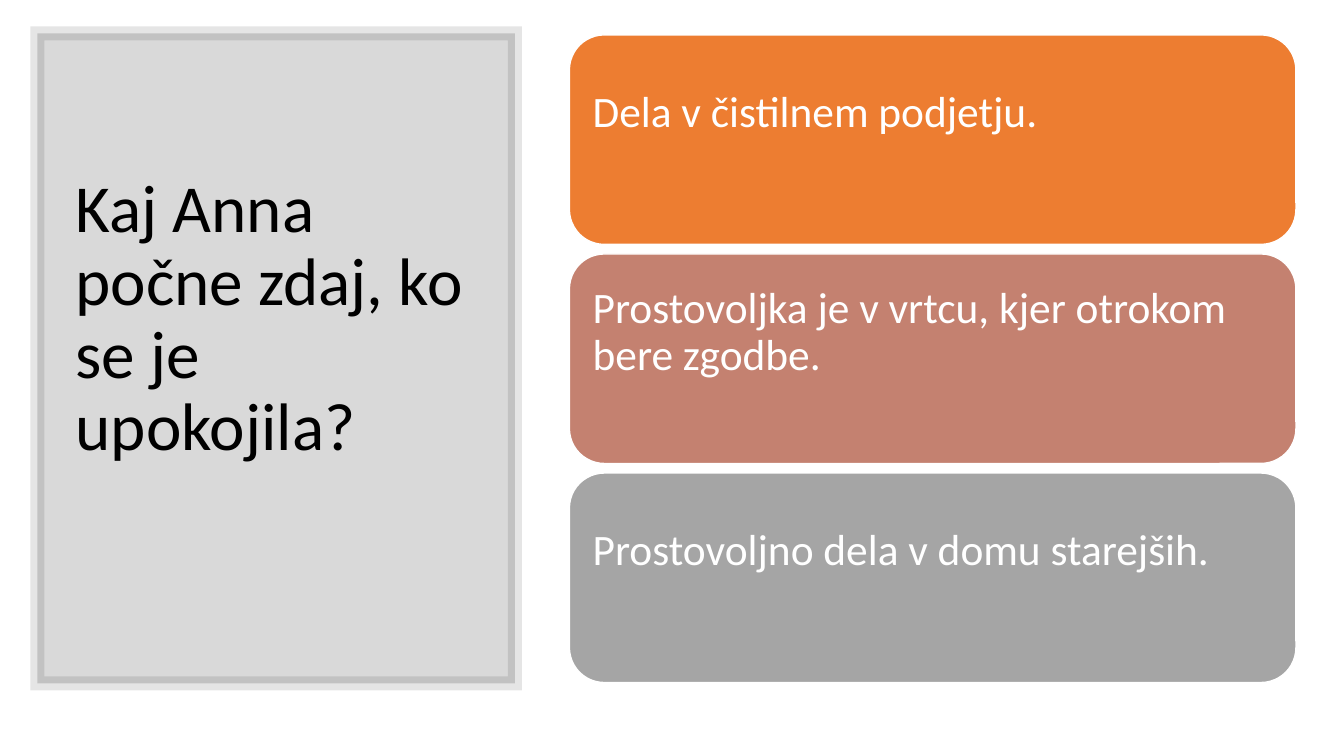
from pptx import Presentation
from pptx.dml.color import RGBColor
from pptx.enum.shapes import MSO_SHAPE
from pptx.enum.text import MSO_ANCHOR, PP_ALIGN
from pptx.oxml.ns import qn
from pptx.util import Cm, Pt
from lxml import etree

RECT, ROUND = MSO_SHAPE.RECTANGLE, MSO_SHAPE.ROUNDED_RECTANGLE
MIDDLE, LEFT = MSO_ANCHOR.MIDDLE, PP_ALIGN.LEFT

# Content
QUESTION = "Kaj Anna počne zdaj, ko se je upokojila?"
ANSWERS = [
    ("Dela v čistilnem podjetju.", "ED7D31"),
    ("Prostovoljka je v vrtcu, kjer otrokom bere zgodbe.", "C48170"),
    ("Prostovoljno dela v domu starejših.", "A5A5A5"),
]


class Theme:
    font = "Calibri"
    dark, light = "000000", "FFFFFF"
    title_size, answer_size = 48, 31
    panel_alpha, frame_alpha = 15, 10


# Layout in cm
PANEL = (0.94, 0.84, 12.04, 16.38)
TITLE = (1.65, 1.78, 10.57, 14.6)
CARD_LEFT, CARD_TOP, CARD_W, CARD_H = 14.35, 0.88, 18.31, 5.28
CARD_STEP = 5.52
CARD_INSET = 0.33


def paint(fill, color, alpha=None):
    fill.solid()
    fill.fore_color.rgb = RGBColor.from_string(color)
    if alpha is not None:
        clr = fill._xPr.find(".//" + qn("a:srgbClr"))
        etree.SubElement(clr, qn("a:alpha"), val=str(alpha * 1000))


def add_box(s, kind, box, color, line_color, line_pt, alpha=None, line_alpha=None):
    sp = s.shapes.add_shape(kind, *map(Cm, box))
    sp.shadow.inherit = False
    paint(sp.fill, color, alpha)
    paint(sp.line.fill, line_color, line_alpha)
    sp.line.width = Pt(line_pt)
    return sp


def write(tf, text, size, color):
    """Fill a frame with one left-aligned line followed by a line break."""
    tf.word_wrap = True
    tf.vertical_anchor = MIDDLE
    p = tf.paragraphs[0]
    p.alignment = LEFT
    p.line_spacing = 0.9
    r = p.add_run()
    r.text = text
    p.add_line_break()
    for font in (r.font, p.font):
        font.name = Theme.font
        font.size = Pt(size)
        font.color.rgb = RGBColor.from_string(color)
    return p


def main():
    prs = Presentation()
    prs.slide_width, prs.slide_height = Cm(33.87), Cm(19.05)
    s = prs.slides.add_slide(prs.slide_layouts[5])

    # Framed panel, drawn behind the title
    panel = add_box(s, RECT, PANEL, Theme.dark, Theme.dark, 10,
                    Theme.panel_alpha, Theme.frame_alpha)
    title = s.shapes.title
    title._element.addprevious(panel._element)
    panel.line._get_or_add_ln().append(
        etree.Element(qn("a:miter"), lim="800000"))

    # Question
    title.left, title.top, title.width, title.height = map(Cm, TITLE)
    write(title.text_frame, QUESTION, Theme.title_size, Theme.dark)

    # Answer cards
    for i, (answer, color) in enumerate(ANSWERS):
        box = (CARD_LEFT, CARD_TOP + i * CARD_STEP, CARD_W, CARD_H)
        sp = add_box(s, ROUND, box, color, Theme.light, 1)
        tf = sp.text_frame
        tf.margin_left = tf.margin_right = Cm(CARD_INSET)
        tf.margin_top = tf.margin_bottom = Cm(CARD_INSET)
        p = write(tf, answer, Theme.answer_size, Theme.light)
        p.space_after = Pt(11)

    prs.save("out.pptx")


if __name__ == "__main__":
    main()
